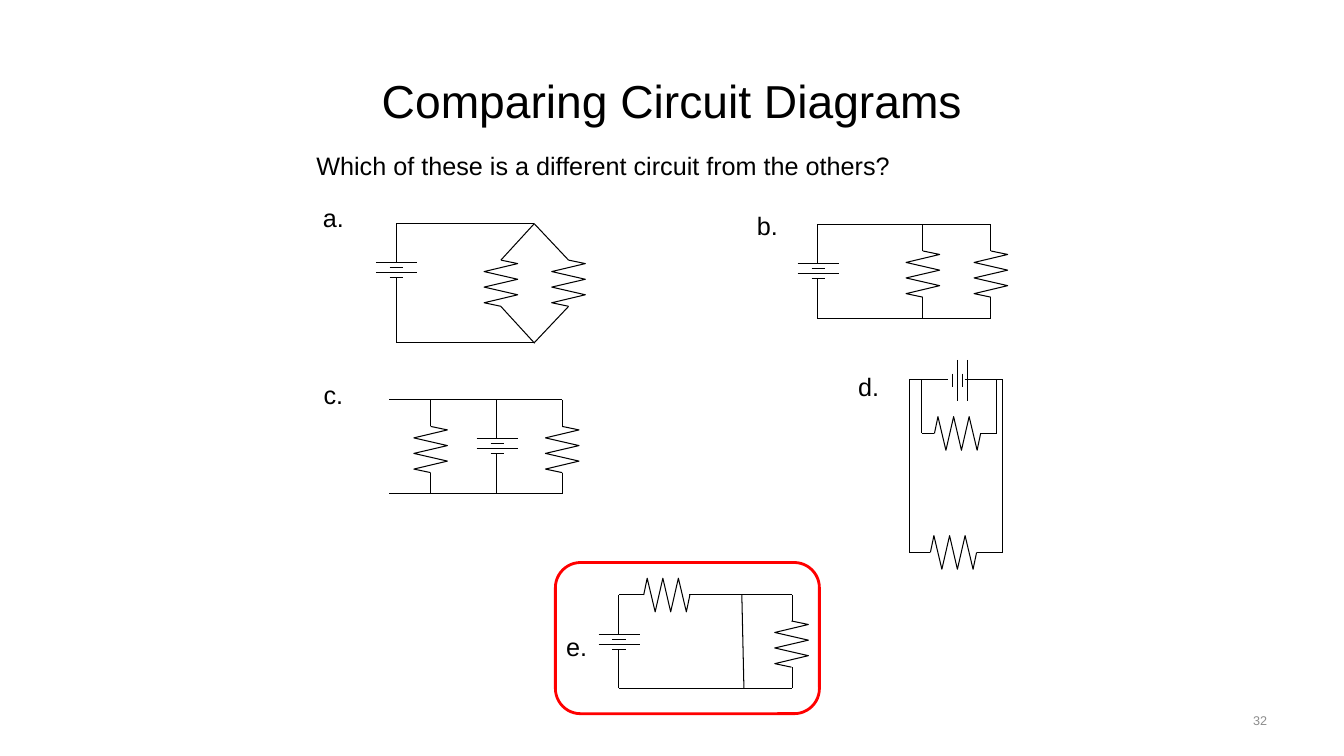
"""Builds a slide that compares five circuit diagrams and marks the odd one out."""
from lxml.etree import SubElement
from pptx import Presentation
from pptx.dml.color import RGBColor
from pptx.enum.shapes import MSO_CONNECTOR as Connector, MSO_SHAPE as Preset
from pptx.enum.text import MSO_ANCHOR as Anchor, PP_ALIGN as Align
from pptx.oxml.ns import qn
from pptx.util import Pt

BLACK = RGBColor(0, 0, 0)
GREY = RGBColor(0x8C, 0x8C, 0x8C)
RED = RGBColor(0xFF, 0, 0)

TEXTS = [
    ("Comparing Circuit Diagrams", (236.9, 37.4, 486, 67.7), 33, BLACK, Align.CENTER, Anchor.MIDDLE),
    ("Which of these is a different circuit from the others?",
     (218.9, 103.7, 522, 28.8), 18, BLACK, Align.LEFT, Anchor.TOP),
    ("32", (688.3, 500.4, 223.9, 28.8), 9, GREY, Align.RIGHT, Anchor.MIDDLE),
]
LABEL_SIZE = (34, 28.8)
ANSWER_FRAME = (396.7, 401.8, 188.6, 108)

FLAT, UPRIGHT = "flat", "upright"
ZIGZAG = [(-16.5, 0), (-14, -12), (-8.3, 12), (-2.8, -12),
          (2.8, 12), (8.3, -12), (14, 12), (16.5, 0)]
PLATES = [(-5.4, 14.8), (-1.8, 4.9), (1.8, 14.8), (5.4, 4.9)]

CIRCUITS = [
    {"label": ("a.", 221.2, 141.1),
     "battery": (283.3, 192.6, UPRIGHT),
     "resistors": [(357.8, 202.3, UPRIGHT), (406.1, 202.3, UPRIGHT)],
     "wires": [(283, 187.2, 283, 159.5), (283, 244.8, 283, 198),
               (283, 159.8, 381.6, 159.8), (381.6, 244.8, 283, 244.8),
               (381.6, 159.8, 406.1, 185.8), (406.1, 218.9, 381.6, 244.8),
               (357.8, 185.8, 381.6, 159.8), (357.8, 218.9, 381.9, 245.2)]},
    {"label": ("b.", 531.2, 146.9),
     "battery": (584.6, 193.3, UPRIGHT),
     "resistors": [(659.2, 195.8, UPRIGHT), (707.8, 195.8, UPRIGHT)],
     "wires": [(583.9, 187.9, 583.9, 160.6), (583.9, 227.5, 583.9, 198.7),
               (583.9, 160.6, 707.8, 160.6), (707.8, 227.5, 583.9, 227.5),
               (707.8, 160.6, 707.8, 179.3), (707.8, 212.4, 707.8, 227.5),
               (659.2, 179.3, 659.2, 160.2), (659.2, 212.4, 659.2, 227.2)]},
    {"label": ("c.", 221.2, 267.1),
     "battery": (355.3, 318.6, UPRIGHT),
     "resistors": [(307.6, 321.1, UPRIGHT), (401.6, 321.1, UPRIGHT)],
     "wires": [(355, 313.2, 355, 285.5), (355, 352.8, 355, 324),
               (277.9, 285.5, 401.8, 285.5), (401.8, 352.8, 277.9, 352.8),
               (401.8, 285.5, 401.8, 304.6), (401.8, 337.7, 401.8, 352.8),
               (307.8, 304.6, 307.8, 285.5), (307.6, 337.7, 307.6, 352.5)]},
    {"label": ("d.", 603.4, 261.4),
     "battery": (685.8, 271.8, FLAT),
     "resistors": [(684, 309.6, FLAT), (681.1, 394.6, FLAT)],
     "wires": [(649.4, 271.4, 677.5, 271.4), (689, 271.4, 716.4, 271.4),
               (649.4, 394.6, 649.4, 271.4), (716.4, 271, 716.4, 394.6),
               (664.6, 394.6, 649.4, 394.6), (716.4, 394.6, 697.7, 394.6),
               (658.5, 309.6, 658.5, 271.4), (712.1, 309.6, 712.1, 271.4),
               (667.4, 309.6, 658.5, 309.6), (700.2, 309.6, 712.1, 309.6)]},
    {"label": ("e.", 394.9, 447.1),
     "battery": (442.4, 458.3, UPRIGHT),
     "resistors": [(476.3, 425, FLAT), (565.4, 460.1, UPRIGHT)],
     "wires": [(442.1, 452.9, 442.1, 424.8), (442.1, 491.8, 442.1, 463.7),
               (442.1, 424.8, 460.1, 424.8), (492.5, 424.8, 565.9, 424.8),
               (565.9, 491.8, 442.1, 491.8), (565.9, 424.8, 565.9, 443.5),
               (565.9, 476.6, 565.9, 491.8), (529.9, 424.8, 531.4, 491.8)]},
]


def points(values):
    return [Pt(value) for value in values]


def style_outline(shape, color, width):
    shape.line.color.rgb = color
    shape.line.width = Pt(width)


def add_text(page, text, place, size, color, align, anchor):
    frame = page.shapes.add_textbox(*points(place)).text_frame
    frame.word_wrap = True
    frame.vertical_anchor = anchor
    para = frame.paragraphs[0]
    para.alignment = align
    span = para.add_run()
    span.text = text
    for name, value in {"name": "Arial", "size": Pt(size)}.items():
        setattr(span.font, name, value)
    span.font.color.rgb = color


def add_wire(group, ends):
    wire = group.shapes.add_connector(Connector.STRAIGHT, *points(ends))
    style_outline(wire, BLACK, 0.75)
    SubElement(wire.element.spPr, qn("a:effectLst"))


def add_resistor(group, center_x, center_y, direction):
    offsets = ZIGZAG if direction == FLAT else [(-y, x) for x, y in ZIGZAG]
    corners = [points((center_x + x, center_y + y)) for x, y in offsets]
    builder = group.shapes.build_freeform(*corners[0], scale=1.0)
    builder.add_line_segments(corners[1:], close=False)
    resistor = builder.convert_to_shape()
    resistor.shadow.inherit = False
    resistor.fill.background()
    style_outline(resistor, BLACK, 0.75)


def add_battery(group, center_x, center_y, direction):
    for offset, half in PLATES:
        if direction == UPRIGHT:
            y = center_y + offset
            add_wire(group, (center_x - half, y, center_x + half, y))
        else:
            x = center_x - offset
            add_wire(group, (x, center_y - half, x, center_y + half))


def add_circuit(page, circuit):
    text, left, top = circuit["label"]
    add_text(page, text, (left, top, *LABEL_SIZE), 18, BLACK, Align.CENTER, Anchor.TOP)
    group = page.shapes.add_group_shape()
    for ends in circuit["wires"]:
        add_wire(group, ends)
    for resistor in circuit["resistors"]:
        add_resistor(group, *resistor)
    add_battery(group, *circuit["battery"])


def main():
    deck = Presentation()
    deck.slide_width, deck.slide_height = Pt(960), Pt(540)
    page = deck.slides.add_slide(deck.slide_layouts[6])
    for entry in TEXTS:
        add_text(page, *entry)
    for circuit in CIRCUITS:
        add_circuit(page, circuit)
    answer = page.shapes.add_shape(Preset.ROUNDED_RECTANGLE, *points(ANSWER_FRAME))
    answer.shadow.inherit = False
    answer.fill.background()
    style_outline(answer, RED, 2)
    deck.save("out.pptx")


if __name__ == "__main__":
    main()
